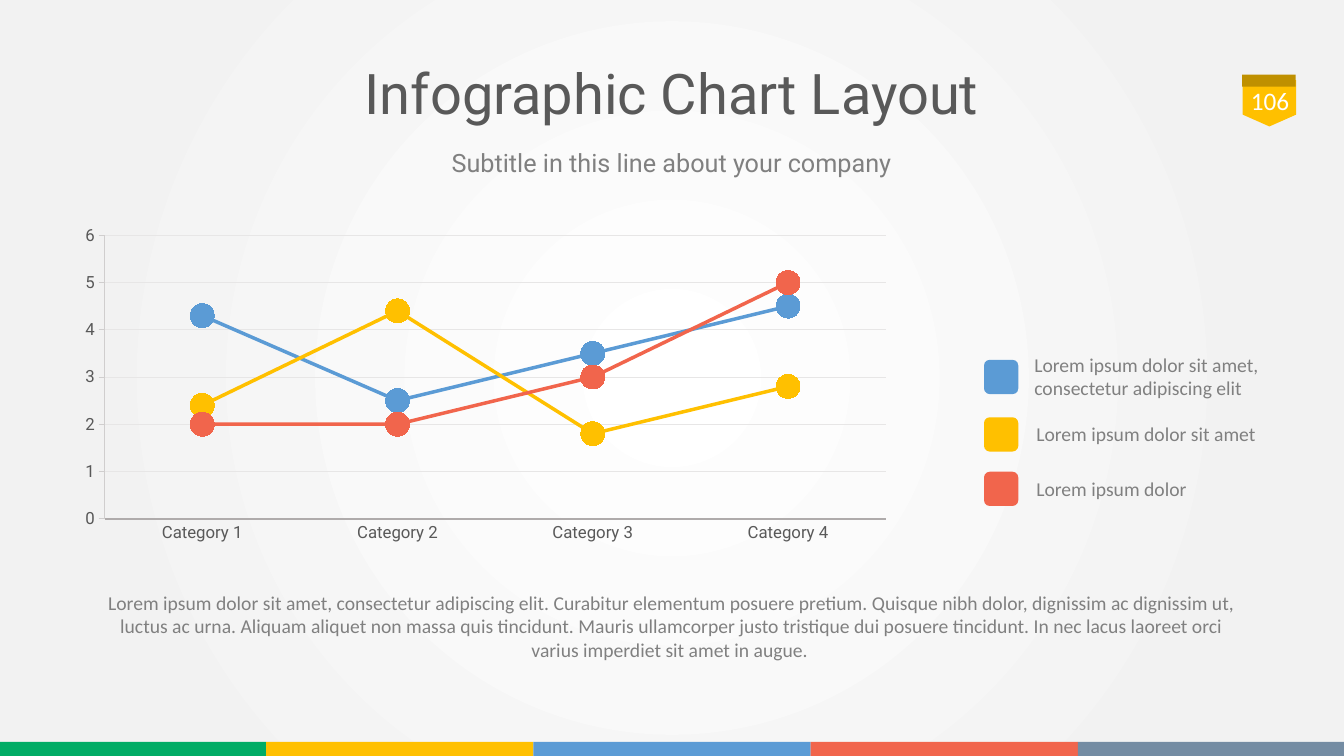
from dataclasses import dataclass
from itertools import pairwise

from pptx import Presentation
from pptx.chart.data import CategoryChartData
from pptx.dml.color import RGBColor
from pptx.enum.chart import XL_CHART_TYPE, XL_MARKER_STYLE, XL_TICK_MARK
from pptx.enum.shapes import MSO_SHAPE
from pptx.enum.text import MSO_ANCHOR, MSO_AUTO_SIZE, PP_ALIGN
from pptx.oxml import parse_xml
from pptx.oxml.ns import nsdecls, qn
from pptx.util import Inches, Pt


@dataclass(frozen=True)
class Theme:
    heading_font: str = "Roboto"
    body_font: str = "Calibri"
    title_size: int = 40
    subtitle_size: int = 18
    body_size: int = 14
    axis_size: int = 12
    dark: str = "595959"
    gray: str = "808080"
    white: str = "FFFFFF"
    backdrop: str = "F2F2F2"
    green: str = "00AC65"
    yellow: str = "FFC000"
    brown: str = "BF9000"
    blue: str = "5B9BD5"
    red: str = "F1654C"
    slate: str = "748CA3"
    category_line: str = "AFABAB"
    value_line: str = "D0CECE"
    grid: str = "E7E6E6"


THEME = Theme()
CATEGORIES = ["Category 1", "Category 2", "Category 3", "Category 4"]
SERIES = [
    ("Series 1", (4.3, 2.5, 3.5, 4.5), THEME.blue),
    ("Series 2", (2.4, 4.4, 1.8, 2.8), THEME.yellow),
    ("Series 3", (2, 2, 3, 5), THEME.red),
]
LEGEND = [
    (3.57, THEME.blue, "Lorem ipsum dolor sit amet, consectetur adipiscing elit", (10.16, 3.45, 2.68, 0.57)),
    (4.14, THEME.yellow, "Lorem ipsum dolor sit amet", (10.18, 4.14, 3.13, 0.34)),
    (4.68, THEME.red, "Lorem ipsum dolor", (10.18, 4.68, 3.13, 0.34)),
]
BODY = (
    "Lorem ipsum dolor sit amet, consectetur adipiscing elit. Curabitur elementum posuere pretium. "
    "Quisque nibh dolor, dignissim ac dignissim ut, luctus ac urna. Aliquam aliquet non massa quis "
    "tincidunt. Mauris ullamcorper justo tristique dui posuere tincidunt. In nec lacus laoreet orci "
    "varius imperdiet sit amet in augue. "
)


def rgb(color):
    return RGBColor.from_string(color)


def inches(box):
    return [Inches(v) for v in box]


def set_font(font, name, size, color):
    font.name = name
    font.size = Pt(size)
    font.color.rgb = rgb(color)


def set_line(line, color, width):
    line.color.rgb = rgb(color)
    line.width = Pt(width)


def set_background(slide):
    slide.background.fill.gradient()
    grad = slide.element.find(".//" + qn("a:gradFill"))
    stops = "".join(
        f'<a:gs pos="{pos * 1000}"><a:srgbClr val="{color}"/></a:gs>'
        for pos, color in [(0, THEME.white), (81, THEME.backdrop), (100, THEME.backdrop)]
    )
    grad.getparent().replace(grad, parse_xml(
        f'<a:gradFill {nsdecls("a")} rotWithShape="1"><a:gsLst>{stops}</a:gsLst>'
        '<a:path path="circle"><a:fillToRect l="50000" t="50000" r="50000" b="50000"/></a:path>'
        "</a:gradFill>"
    ))


def add_block(slide, kind, box, color):
    sp = slide.shapes.add_shape(kind, *inches(box))
    sp.shadow.inherit = False
    sp.fill.solid()
    sp.fill.fore_color.rgb = rgb(color)
    sp.line.fill.background()
    return sp


def write(sp, text, font, size, color, align=PP_ALIGN.LEFT, anchor=MSO_ANCHOR.TOP):
    tf = sp.text_frame
    tf.text = text
    tf.word_wrap = True
    tf.auto_size = MSO_AUTO_SIZE.NONE
    tf.vertical_anchor = anchor
    p = tf.paragraphs[0]
    p.alignment = align
    set_font(p.runs[0].font, font, size, color)
    return tf


def add_text(slide, box, *args, **kwargs):
    return write(slide.shapes.add_textbox(*inches(box)), *args, **kwargs)


def add_title(slide, text):
    title = slide.shapes.title
    title.left, title.top, title.width, title.height = inches((0.88, 0.56, 11.7, 0.8))
    tf = write(title, text, THEME.heading_font, THEME.title_size, THEME.dark,
               PP_ALIGN.CENTER, MSO_ANCHOR.MIDDLE)
    tf.paragraphs[0].line_spacing = 0.9


def add_badge(slide, number):
    flag = add_block(slide, MSO_SHAPE.PENTAGON, (12.36, 0.76, 0.46, 0.53), THEME.yellow)
    flag.rotation = 90
    flag.adjustments[0] = 0.255
    add_block(slide, MSO_SHAPE.RECTANGLE, (12.32, 0.74, 0.53, 0.12), THEME.brown)
    add_text(slide, (12.29, 0.74, 0.61, 0.52), number, THEME.body_font, THEME.subtitle_size,
             THEME.white, PP_ALIGN.CENTER, MSO_ANCHOR.MIDDLE)


def add_footer(slide):
    edges = pairwise([0, 2.64, 5.29, 8.04, 10.69, 13.33])
    colors = [THEME.green, THEME.yellow, THEME.blue, THEME.red, THEME.slate]
    for (left, right), color in zip(edges, colors):
        add_block(slide, MSO_SHAPE.RECTANGLE, (left, 7.36, right - left, 0.14), color)


def style_axis(axis, tick, color, width):
    axis.major_tick_mark = tick
    axis.minor_tick_mark = XL_TICK_MARK.NONE
    set_font(axis.tick_labels.font, THEME.heading_font, THEME.axis_size, THEME.dark)
    set_line(axis.format.line, color, width)


def add_line_chart(slide):
    data = CategoryChartData()
    data.categories = CATEGORIES
    for name, values, _ in SERIES:
        data.add_series(name, values)
    chart = slide.shapes.add_chart(
        XL_CHART_TYPE.LINE_MARKERS, *inches((0.68, 2.17, 8.27, 3.28)), data).chart
    chart.has_legend = False
    chart.has_title = False
    set_font(chart.font, THEME.heading_font, 10, THEME.gray)
    style_axis(chart.category_axis, XL_TICK_MARK.NONE, THEME.category_line, 1.5)
    axis = chart.value_axis
    style_axis(axis, XL_TICK_MARK.OUTSIDE, THEME.value_line, 0.75)
    axis.minimum_scale, axis.maximum_scale, axis.major_unit = 0, 6, 1
    axis.has_major_gridlines = True
    set_line(axis.major_gridlines.format.line, THEME.grid, 0.75)
    plot = chart.plots[0]
    plot.vary_by_categories = False
    for series, (_, _, color) in zip(plot.series, SERIES):
        series.smooth = False
        set_line(series.format.line, color, 2.5)
        marker = series.marker
        marker.style = XL_MARKER_STYLE.CIRCLE
        marker.size = 17
        marker.format.fill.solid()
        marker.format.fill.fore_color.rgb = rgb(color)
        marker.format.line.color.rgb = rgb(color)


def add_legend(slide):
    for top, color, text, box in LEGEND:
        add_block(slide, MSO_SHAPE.ROUNDED_RECTANGLE, (9.76, top, 0.34, 0.34), color)
        add_text(slide, box, text, THEME.body_font, THEME.body_size, THEME.gray)


def main():
    prs = Presentation()
    prs.slide_width, prs.slide_height = Inches(13.33), Inches(7.5)
    s = prs.slides.add_slide(prs.slide_layouts[5])
    set_background(s)
    add_badge(s, "106")
    add_footer(s)
    add_title(s, "Infographic Chart Layout ")
    add_text(s, (3.77, 1.41, 5.78, 0.4), "Subtitle in this line about your company",
             THEME.heading_font, THEME.subtitle_size, THEME.gray, PP_ALIGN.CENTER)
    add_line_chart(s)
    add_legend(s)
    tf = add_text(s, (0.84, 5.79, 11.65, 1.02), BODY, THEME.body_font, THEME.body_size,
                  THEME.gray, PP_ALIGN.CENTER)
    tf.margin_left = tf.margin_right = Inches(0.13)
    tf.margin_top = tf.margin_bottom = Inches(0.07)
    prs.save("out.pptx")


if __name__ == "__main__":
    main()
